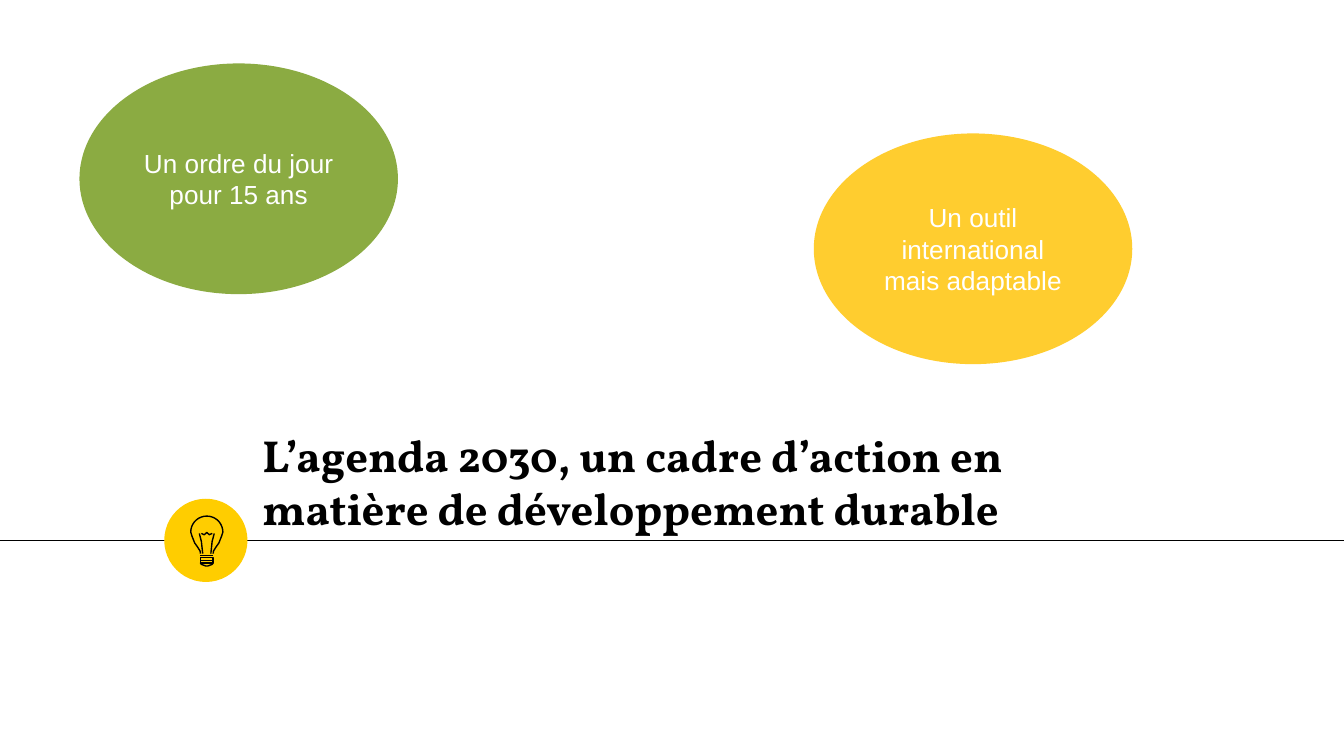
from dataclasses import dataclass
from math import cos, radians, sin

from pptx import Presentation
from pptx.dml.color import RGBColor as RGB
from pptx.enum.shapes import MSO_CONNECTOR as LINK, MSO_SHAPE as KIND
from pptx.enum.text import MSO_ANCHOR as ANCHOR, MSO_AUTO_SIZE as FIT, PP_ALIGN as ALIGN
from pptx.oxml.ns import qn
from pptx.util import Pt
from lxml.etree import SubElement as sub


@dataclass(frozen=True)
class Theme:
    """Colours, fonts and sizes of the slide."""
    ink: RGB = RGB(0, 0, 0)
    white: RGB = RGB(255, 255, 255)
    green: RGB = RGB.from_string("8BAB42")
    amber: RGB = RGB.from_string("FFCD2F")
    gold: RGB = RGB.from_string("FFCD00")
    head: str = "Vollkorn"
    body: str = "Arial"
    large: float = 24
    small: float = 14
    thin: float = 0.75


T = Theme()


def style(item, values):
    """Set each named attribute on an object."""
    for name, value in values.items():
        setattr(item, name, value)


def write(frame, text, align, font, **box):
    """Fill a text frame with one formatted paragraph."""
    style(frame, {"word_wrap": True, "auto_size": FIT.NONE, **box})
    frame.text = text
    para = frame.paragraphs[0]
    para.alignment = align
    color = font.pop("color")
    style(para.runs[0].font, font)
    para.runs[0].font.color.rgb = color


def add_title(slide, text, place):
    """Place and format the title."""
    title = slide.shapes.title
    style(title, dict(zip(("left", "top", "width", "height"), map(Pt, place))))
    pads = {f"margin_{side}": Pt(7.2) for side in ("left", "top", "right", "bottom")}
    font = {"name": T.head, "size": Pt(T.large), "bold": True, "color": T.ink}
    write(title.text_frame, text, ALIGN.LEFT, font,
          vertical_anchor=ANCHOR.BOTTOM, **pads)


def add_oval(slide, place, fill, text=None):
    """Add a filled ellipse, with a label if given."""
    oval = slide.shapes.add_shape(KIND.OVAL, *map(Pt, place))
    oval.shadow.inherit = False
    oval.fill.solid()
    oval.fill.fore_color.rgb = fill
    if text is None:
        oval.line.fill.background()
        return
    oval.line.color.rgb = fill
    oval.line.width = Pt(2)
    font = {"name": T.body, "size": Pt(T.small), "color": T.white}
    write(oval.text_frame, text, ALIGN.CENTER, font, vertical_anchor=ANCHOR.MIDDLE)


def add_rule(shapes, start, end):
    """Add a thin straight line."""
    rule = shapes.add_connector(LINK.STRAIGHT, *map(Pt, start + end))
    rule.line.color.rgb = T.ink
    rule.line.width = Pt(T.thin)
    sub(rule._element.spPr, qn("a:effectLst"))


def add_path(shapes, mid, dots, close=False):
    """Draw an outline through dots given around a centre."""
    spots = [((mid[0] + x) * 100, (mid[1] + y) * 100) for x, y in dots]
    pen = shapes.build_freeform(*spots[0], scale=Pt(0.01))
    pen.add_line_segments(spots[1:], close=close)
    path = pen.convert_to_shape()
    path.shadow.inherit = False
    path.fill.background()
    path.line.color.rgb = T.ink
    path.line.width = Pt(T.thin)


def flip(dots):
    """Mirror dots left to right, in reverse order."""
    return [(-x, y) for x, y in reversed(dots)]


def add_bulb(slide, mid):
    """Draw a light bulb around the centre of its glass."""
    shapes = slide.shapes.add_group_shape().shapes
    wide = 3.4
    for top, low in ((13.7, 15.1), (15.1, 16.6)):
        add_path(shapes, mid, [(-wide, top), (wide, top), (wide, low), (-wide, low)], True)
    foot = [(wide, 16.6), (2.9, 17.3), (0.5, 18.2)]
    add_path(shapes, mid, foot + flip(foot), True)
    side = [(wide, 11.5), (3.6, 10.1), (5, 7.9), (6.5, 5.8), (7.9, 2.2)]
    dome = [(8.6 * cos(radians(a)), -8.6 * sin(radians(a))) for a in range(0, 181, 10)]
    add_path(shapes, mid, side + dome + flip(side))
    wire = [(2.2, 11.5), (2.9, 5), (4, 0.7)]
    for dots in (wire, flip(wire)):
        add_path(shapes, mid, dots)
    wave = [(-2.9, 0.7), (-1.4, 1.4), (0, 0.2)]
    add_path(shapes, mid, wave + flip(wave)[1:])
    x, y = mid
    add_rule(shapes, (x - wide, y + 12.5), (x + wide, y + 12.5))


def main():
    """Build and save the slide."""
    deck = Presentation()
    style(deck, {"slide_width": Pt(720), "slide_height": Pt(405)})
    slide = deck.slides.add_slide(deck.slide_layouts[0])
    spare = slide.placeholders[1].element
    spare.getparent().remove(spare)
    add_rule(slide.shapes, (-1, 289.6), (721, 289.6))
    add_oval(slide, (88, 267.2, 44.6, 44.6), T.gold)
    add_title(slide, "L’agenda 2030, un cadre d’action en matière de développement durable",
              (133.4, 227.6, 476, 66.2))
    add_bulb(slide, (110.8, 285.1))
    for x, y, fill, text in (
        (43.6, 35, T.green, "Un ordre du jour pour 15 ans"),
        (437, 72.5, T.amber, "Un outil international mais adaptable"),
    ):
        add_oval(slide, (x, y, 168.6, 121.6), fill, text)
    deck.save("out.pptx")


if __name__ == "__main__":
    main()
